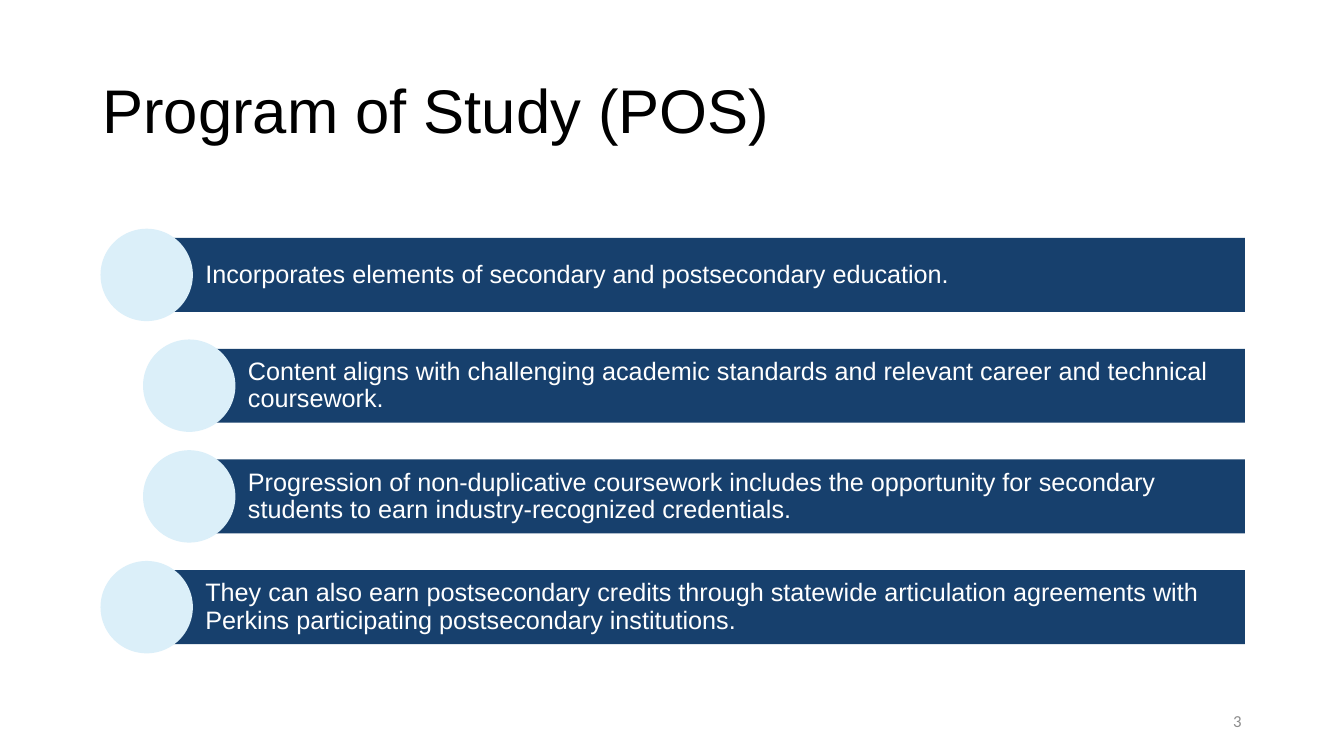
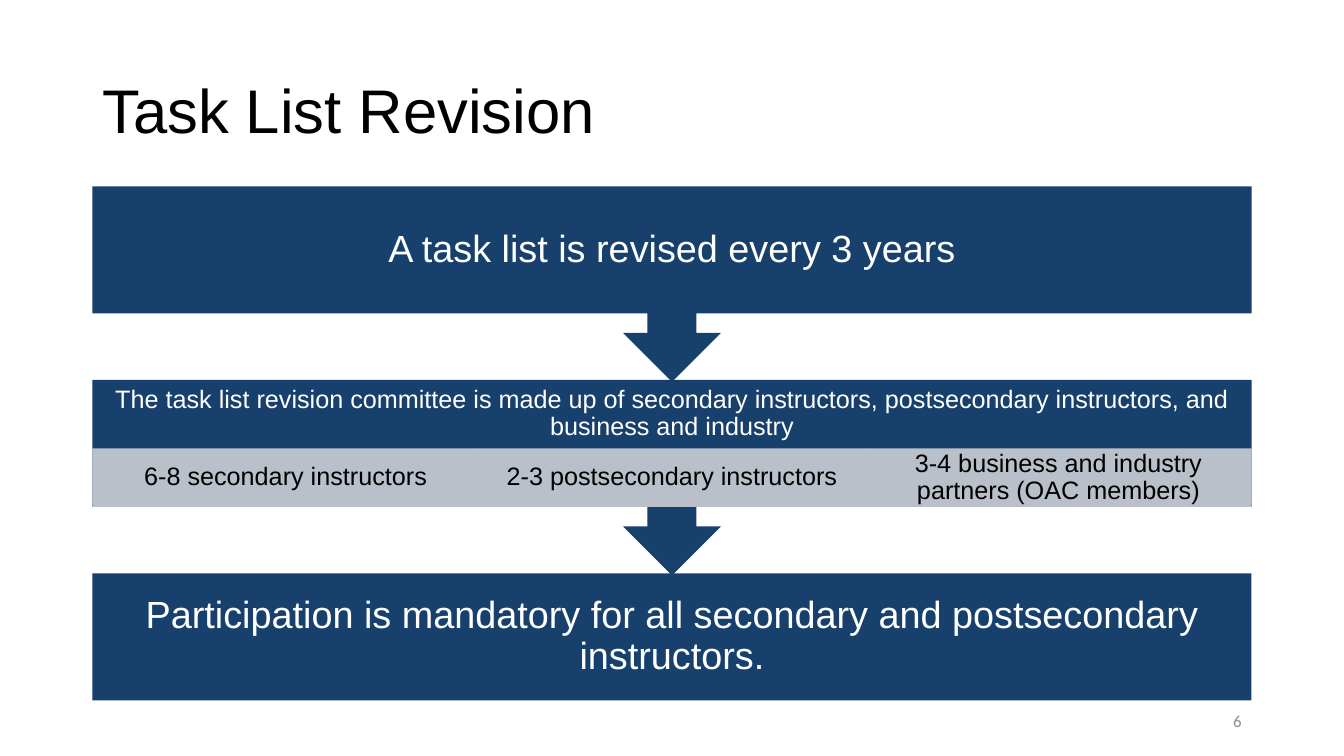
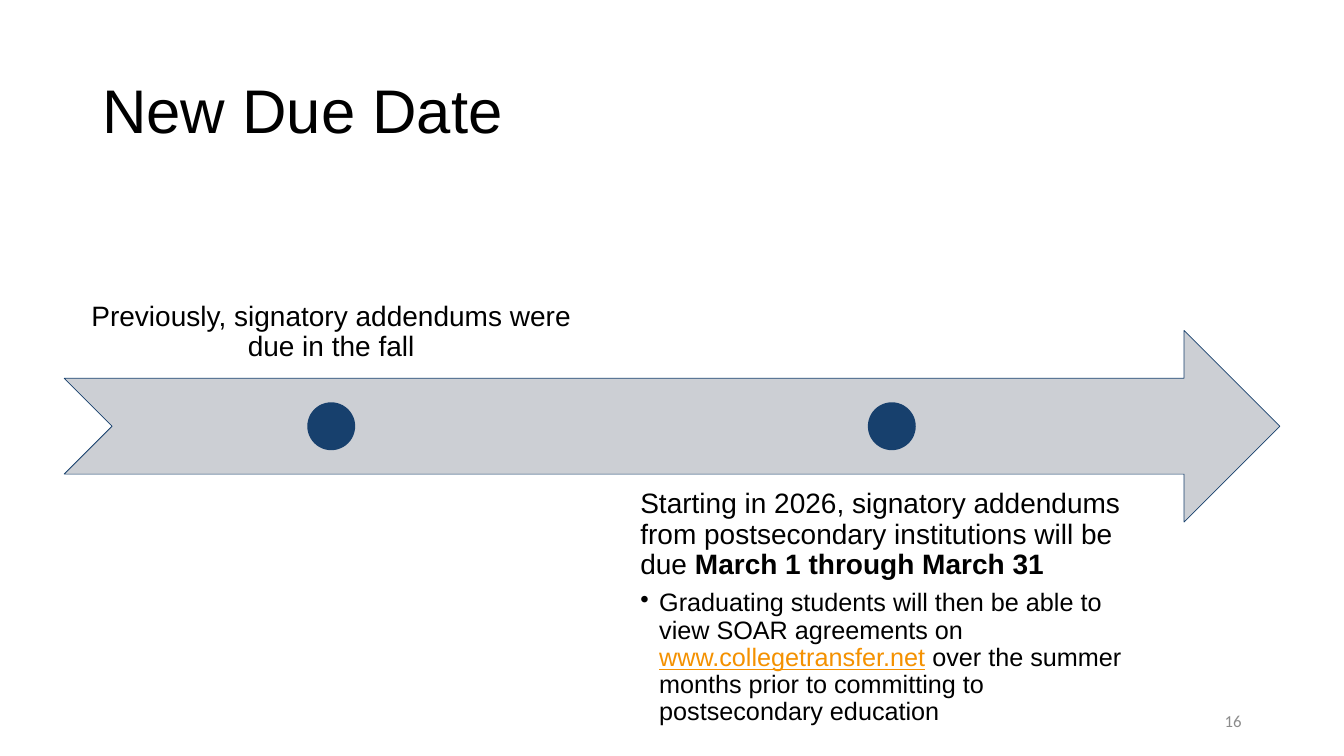
from dataclasses import dataclass
from typing import Optional

from lxml import etree
from pptx import Presentation
from pptx import util as u
from pptx.dml import color
from pptx.enum import shapes, text
from pptx.oxml import ns

Shape = shapes.MSO_SHAPE
Align = text.PP_ALIGN
Anchor = text.MSO_ANCHOR


@dataclass(frozen=True)
class Theme:
    black: str = "000000"
    white: str = "FFFFFF"
    navy: str = "17406D"
    pale_blue: str = "DBEFF9"
    silver: str = "CCCFD4"
    link: str = "F49100"
    page_grey: str = "8C8C8C"
    font: str = "Arial"
    page_font: str = "Calibri"
    title: float = 44
    heading: float = 27
    lead: float = 20
    body: float = 18
    page_number: float = 12
    tight: float = 0.9


THEME = Theme()


@dataclass(frozen=True)
class Box:
    """A place on the slide, in points."""
    left: float
    top: float
    width: float
    height: float

    @property
    def center(self) -> float:
        return self.left + self.width / 2

    def lengths(self) -> tuple:
        return tuple(u.Pt(n) for n in (self.left, self.top, self.width, self.height))


@dataclass(frozen=True)
class Span:
    words: str
    bold: bool = False
    link: bool = False


@dataclass(frozen=True)
class Style:
    size: float = THEME.body
    ink: str = THEME.black
    font: str = THEME.font
    align: Align = Align.LEFT
    anchor: Anchor = Anchor.MIDDLE
    insets: tuple = (7.2, 3.6, 7.2, 3.6)  # left, top, right, bottom
    spacing: float = THEME.tight


@dataclass(frozen=True)
class Bar:
    words: str
    indented: bool


TITLE_BOX = Box(66, 28.8, 828, 104.4)
PAGE_BOX = Box(678, 500.5, 216, 28.8)
TITLE = Style(THEME.title)
PAGE = Style(THEME.page_number, THEME.page_grey, THEME.page_font, Align.RIGHT, spacing=1)


def rgb(code: str) -> color.RGBColor:
    return color.RGBColor.from_string(code)


def write_paragraph(para, spans: list[Span], style: Style) -> None:
    para.alignment = style.align
    para.line_spacing = style.spacing
    para.font.name = style.font
    para.font.size = u.Pt(style.size)
    para.font.color.rgb = rgb(style.ink)
    for span in spans:
        run = para.add_run()
        run.text = span.words
        if span.bold:
            run.font.bold = True
        if span.link:
            run.font.underline = True
            run.font.color.rgb = rgb(THEME.link)


def write(shape, words: str | list[Span], style: Style):
    """Fill the first paragraph of a shape and return its text frame."""
    frame = shape.text_frame
    frame.word_wrap = True
    frame.vertical_anchor = style.anchor
    (frame.margin_left, frame.margin_top,
     frame.margin_right, frame.margin_bottom) = (u.Pt(n) for n in style.insets)
    spans = [Span(words)] if isinstance(words, str) else words
    write_paragraph(frame.paragraphs[0], spans, style)
    return frame


def add_text(page, box: Box, words: str | list[Span], style: Style):
    return write(page.shapes.add_textbox(*box.lengths()), words, style)


def add_shape(page, kind: Shape, box: Box, fill: str, line: Optional[str] = None,
              opacity: int = 100):
    shape = page.shapes.add_shape(kind, *box.lengths())
    shape.shadow.inherit = False
    shape.fill.solid()
    shape.fill.fore_color.rgb = rgb(fill)
    if opacity < 100:
        tint = shape.fill._xPr.find(".//" + ns.qn("a:srgbClr"))
        etree.SubElement(tint, ns.qn("a:alpha"), val=str(opacity * 1000))
    if line:
        shape.line.color.rgb = rgb(line)
        shape.line.width = u.Pt(0.5)
    else:
        shape.line.fill.background()
    return shape


def add_bullet(frame, spans: list[Span], style: Style, hang: float) -> None:
    para = frame.add_paragraph()
    properties = para._p.get_or_add_pPr()
    properties.set("marL", str(u.Pt(hang)))
    properties.set("indent", str(-u.Pt(hang)))
    etree.SubElement(properties, ns.qn("a:buChar"), char="•")
    write_paragraph(para, spans, style)


def new_page(deck, title: str, number: int):
    page = deck.slides.add_slide(deck.slide_layouts[6])
    add_text(page, TITLE_BOX, title, TITLE)
    add_text(page, PAGE_BOX, str(number), PAGE)
    return page


def program_of_study(deck) -> None:
    page = new_page(deck, "Program of Study (POS)", 3)
    bars = [
        Bar("Incorporates elements of secondary and postsecondary education.", False),
        Bar("Content aligns with challenging academic standards and relevant career "
            "and technical coursework.", True),
        Bar("Progression of non-duplicative coursework includes the opportunity for "
            "secondary students to earn industry-recognized credentials.", True),
        Bar("They can also earn postsecondary credits through statewide articulation "
            "agreements with Perkins participating postsecondary institutions.", False),
    ]
    left, right, top, pitch = 71.8, 889.2, 170, 79.1
    height, circle, indent = 52.8, 66, 30.4
    style = Style(ink=THEME.white, insets=(41.9, 3.6, 3.6, 3.6))
    for row, bar in enumerate(bars):
        circle_left = left + indent * bar.indented
        bar_left = circle_left + circle / 2
        bar_top = top + row * pitch
        band = add_shape(page, Shape.RECTANGLE,
                         Box(bar_left, bar_top, right - bar_left, height), THEME.navy)
        write(band, bar.words, style)
        add_shape(page, Shape.OVAL,
                  Box(circle_left, bar_top - (circle - height) / 2, circle, circle),
                  THEME.pale_blue)


def task_list_revision(deck) -> None:
    page = new_page(deck, "Task List Revision", 6)
    left, width, top, pitch = 66, 828, 133.1, 138.2
    body, callout, strip = 90.8, 139.7, 41.8
    heading = Style(THEME.heading, THEME.white, align=Align.CENTER, insets=(15, 15, 15, 15))
    committee = Style(ink=THEME.white, align=Align.CENTER, insets=(10, 0, 10, strip))
    member = Style(align=Align.CENTER, insets=(10, 2, 10, 2))
    steps = [
        (Shape.DOWN_ARROW_CALLOUT, callout, heading, "A task list is revised every 3 years"),
        (Shape.DOWN_ARROW_CALLOUT, callout, committee,
         "The task list revision committee is made up of secondary instructors, "
         "postsecondary instructors, and business and industry"),
        (Shape.RECTANGLE, body, heading,
         "Participation is mandatory for all secondary and postsecondary instructors."),
    ]
    for row, (kind, height, style, words) in enumerate(steps):
        step = add_shape(page, kind, Box(left, top + row * pitch, width, height), THEME.navy)
        write(step, words, style)

    members = ["6-8 secondary instructors", "2-3 postsecondary instructors",
               "3-4 business and industry partners (OAC members)"]
    cell = width / len(members)
    strip_top = top + pitch + body - strip
    for column, words in enumerate(members):
        box = Box(left + column * cell, strip_top, cell, strip)
        write(add_shape(page, Shape.RECTANGLE, box, THEME.silver, opacity=90), words, member)


def new_due_date(deck) -> None:
    page = new_page(deck, "New Due Date", 16)
    arrow = Box(45.8, 236, 868.4, 136.9)
    before = Box(45.8, 133.1, 381.6, 136.9)
    after = Box(446.2, 338.6, 381.6, 136.9)
    dot = 34.2
    insets = (11.2, 11.2, 11.2, 11.2)
    add_shape(page, Shape.NOTCHED_RIGHT_ARROW, arrow, THEME.silver, THEME.navy)
    for label in (before, after):
        add_shape(page, Shape.OVAL,
                  Box(label.center - dot / 2, arrow.top + (arrow.height - dot) / 2, dot, dot),
                  THEME.navy)

    add_text(page, before, "Previously, signatory addendums were due in the fall",
             Style(THEME.lead, align=Align.CENTER, anchor=Anchor.BOTTOM, insets=insets))
    frame = add_text(page, after, [
        Span("Starting in 2026, signatory addendums from postsecondary institutions "
             "will be due "),
        Span("March 1 through March 31", bold=True),
    ], Style(THEME.lead, anchor=Anchor.TOP, insets=insets))
    frame.paragraphs[0].space_after = u.Pt(7)
    add_bullet(frame, [
        Span("Graduating students will then be able to view SOAR agreements on "),
        Span("www.collegetransfer.net", link=True),
        Span(" over the summer months prior to committing to postsecondary education"),
    ], Style(), hang=13.5)


def main() -> None:
    deck = Presentation()
    deck.slide_width, deck.slide_height = u.Pt(960), u.Pt(540)
    program_of_study(deck)
    task_list_revision(deck)
    new_due_date(deck)
    deck.save("out.pptx")


if __name__ == "__main__":
    main()
